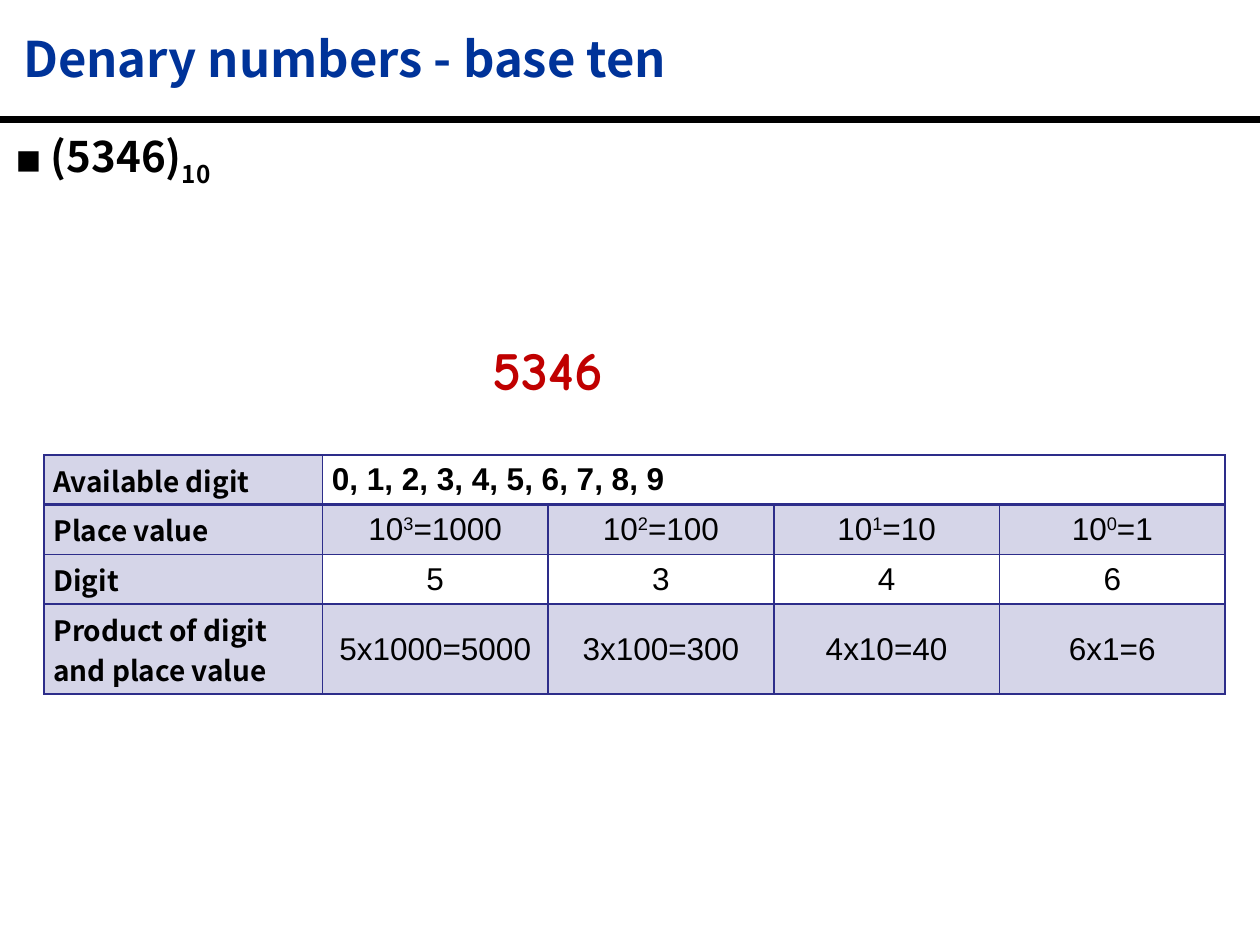
from lxml.etree import SubElement
from pptx import Presentation
from pptx.dml.color import RGBColor
from pptx.enum.shapes import MSO_CONNECTOR
from pptx.enum.text import MSO_ANCHOR, PP_ALIGN
from pptx.oxml.ns import qn
from pptx.util import Pt

BLACK = RGBColor(0x00, 0x00, 0x00)
BLUE = RGBColor(0x00, 0x33, 0x99)
RED = RGBColor(0xC0, 0x00, 0x00)
NAVY = RGBColor(0x2D, 0x2D, 0x8A)
LAVENDER = RGBColor(0xD5, 0xD5, 0xE8)
HEAD_FONT = "Noto Sans CJK SC"
CELL_FONT = "Arial"
DIGIT_FONT = "Comic Neue"
SUB, SUPER = -25, 30


class Deck:
    def __init__(self, prs):
        self.s = prs.slides.add_slide(prs.slide_layouts[5])

    def run(self, p, text, size, font=HEAD_FONT, color=BLACK, bold=True, base=0):
        r = p.add_run()
        r.text = text
        r.font.size = Pt(size)
        r.font.name = font
        r.font.bold = bold
        r.font.color.rgb = color
        if base:
            r.font._element.set("baseline", str(base * 1000))

    def title(self, text, x, y, w, h):
        sp = self.s.shapes.title
        sp.left, sp.top, sp.width, sp.height = Pt(x), Pt(y), Pt(w), Pt(h)
        tf = sp.text_frame
        tf.vertical_anchor = MSO_ANCHOR.MIDDLE
        p = tf.paragraphs[0]
        p.alignment = PP_ALIGN.LEFT
        self.run(p, text, 28, color=BLUE)

    def rule(self, x1, x2, y, width):
        c = self.s.shapes.add_connector(MSO_CONNECTOR.STRAIGHT, Pt(x1), Pt(y), Pt(x2), Pt(y))
        c.line.color.rgb = BLACK
        c.line.width = Pt(width)
        SubElement(c._element.spPr, qn("a:effectLst"))

    def text(self, x, y, w, h, wrap=True):
        tf = self.s.shapes.add_textbox(Pt(x), Pt(y), Pt(w), Pt(h)).text_frame
        tf.word_wrap = wrap
        return tf.paragraphs[0]

    def bullet(self, p, char, indent):
        pPr = p._p.get_or_add_pPr()
        pPr.set("marL", str(Pt(indent)))
        pPr.set("indent", str(-Pt(indent)))
        SubElement(pPr, qn("a:buFont"), typeface=CELL_FONT)
        SubElement(pPr, qn("a:buChar"), char=char)

    def table(self, x, y, cols, rows):
        frame = self.s.shapes.add_table(len(rows), len(cols), Pt(x), Pt(y), Pt(sum(cols)), Pt(sum(rows)))
        t = frame.table
        t.first_row = t.horz_banding = False
        for col, w in zip(t.columns, cols):
            col.width = Pt(w)
        for row, h in zip(t.rows, rows):
            row.height = Pt(h)
        return t

    def cell(self, cell, runs, filled, centered=False, anchor=MSO_ANCHOR.MIDDLE, bottom=1, **style):
        cell.margin_left = cell.margin_right = Pt(5.4)
        cell.margin_top = cell.margin_bottom = Pt(2.7)
        cell.vertical_anchor = anchor
        p = cell.text_frame.paragraphs[0]
        p.alignment = PP_ALIGN.CENTER if centered else PP_ALIGN.LEFT
        for text, base in runs:
            self.run(p, text, base=base, **style)
        tcPr = cell._tc.get_or_add_tcPr()
        for side, width in (("L", 1), ("R", 1), ("T", 1), ("B", bottom)):
            ln = SubElement(tcPr, qn(f"a:ln{side}"), w=str(Pt(width)))
            fill = SubElement(ln, qn("a:solidFill"))
            SubElement(fill, qn("a:srgbClr"), val=str(NAVY))
        if filled:
            cell.fill.solid()
            cell.fill.fore_color.rgb = LAVENDER
        else:
            cell.fill.background()


def main():
    prs = Presentation()
    prs.slide_width, prs.slide_height = Pt(720), Pt(540)
    d = Deck(prs)
    d.rule(0, 720, 68.4, 3.75)
    d.title("Denary numbers - base ten", 6, 6, 705, 54.5)

    p = d.text(2, 71.3, 708.5, 34)
    d.bullet(p, "■", 20)
    d.run(p, "(5346)", 24)
    d.run(p, "10", 24, base=SUB)

    labels = ["Available digit", "Place value", "Digit", "Product of digit and place value"]
    t = d.table(25.2, 260, [159] + [129] * 4, [28.4] * 3 + [51.6])
    for i, label in enumerate(labels):
        d.cell(t.cell(i, 0), [(label, 0)], True, anchor=MSO_ANCHOR.TOP, bottom=1 if i else 2, size=16)
    t.cell(0, 1).merge(t.cell(0, 4))
    for j in range(1, 5):
        digits = [(", ".join(str(n) for n in range(10)), 0)] if j == 1 else []
        d.cell(t.cell(0, j), digits, False, bottom=2, size=18, font=CELL_FONT)
    for j, digit in enumerate("5346", 1):
        power = 4 - j
        value = 10 ** power
        column = [
            [("10", 0), (str(power), SUPER), (f"={value}", 0)],
            [(digit, 0)],
            [(f"{digit}x{value}={int(digit) * value}", 0)],
        ]
        for i, runs in enumerate(column, 1):
            d.cell(t.cell(i, j), runs, i != 2, centered=True, size=18, font=CELL_FONT, bold=False)

    p = d.text(274.5, 152, 147.5, 72.5, wrap=False)
    d.run(p, "5346", 54, font=DIGIT_FONT, color=RED, base=SUB)
    prs.save("out.pptx")


if __name__ == "__main__":
    main()
